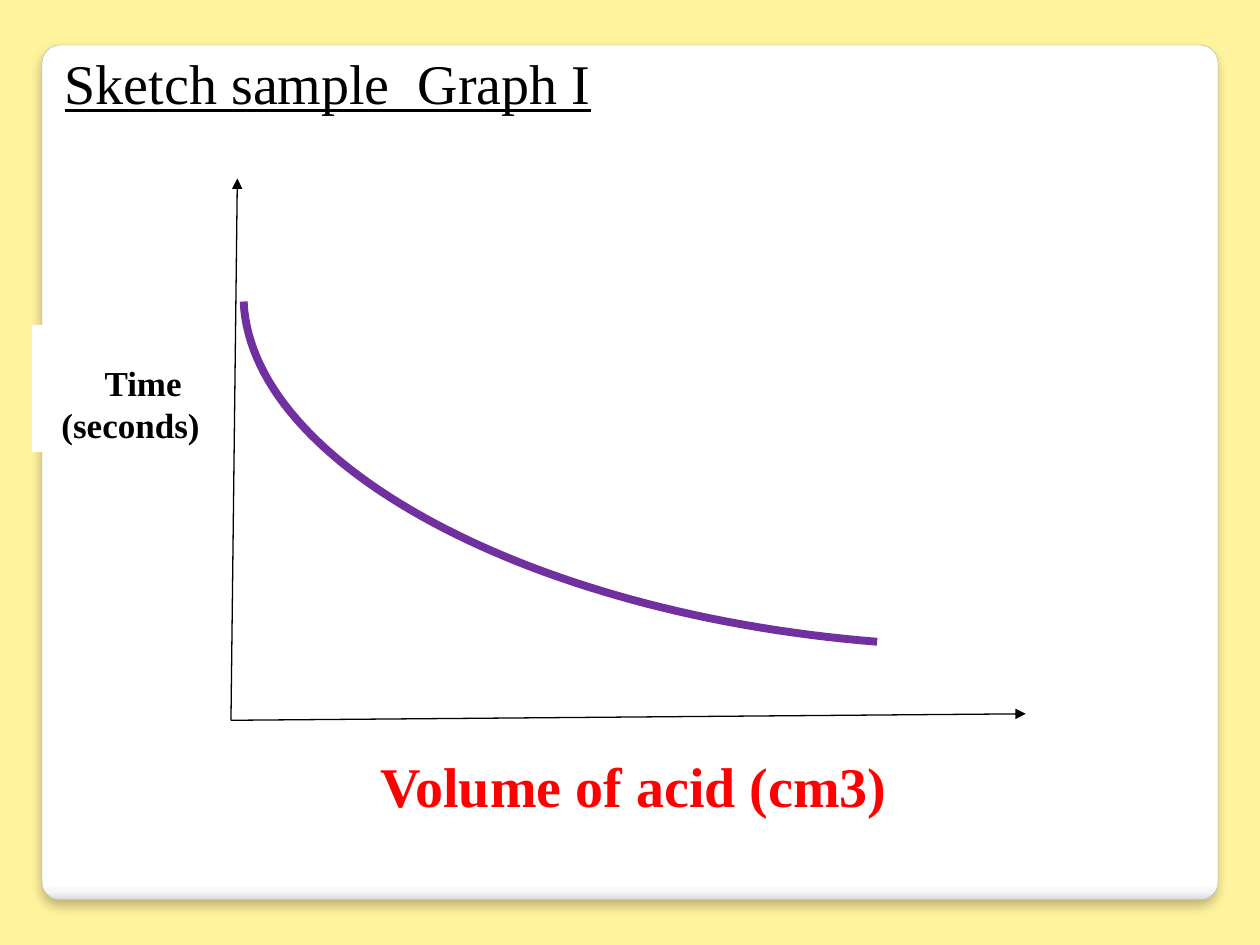
from dataclasses import dataclass
from lxml import etree
from pptx import Presentation
from pptx.dml.color import RGBColor
from pptx.enum.shapes import MSO_CONNECTOR, MSO_SHAPE
from pptx.enum.text import MSO_ANCHOR
from pptx.oxml.ns import qn
from pptx.util import Inches, Pt

LINE = MSO_CONNECTOR.STRAIGHT
RECT = MSO_SHAPE.RECTANGLE
ROUND = MSO_SHAPE.ROUNDED_RECTANGLE
TOP = MSO_ANCHOR.TOP


@dataclass(frozen=True)
class Theme:
    font: str = "Times New Roman"
    back: str = "FFF39D"
    card: str = "FFFFFF"
    edge: str = "A4A4A4"
    ink: str = "000000"
    red: str = "FF0000"
    curve: str = "7030A0"
    fade: tuple = ((0, "FFFFFF"), (98, "FFFFFF"), (99, "F7F7F7"), (100, "DADADA"))
    large: int = 32
    small: int = 20


THEME = Theme()
COLS, ROWS = 120, 90
CELL = Inches(10) / COLS


def cell(n):
    """Length of n grid cells."""
    return round(n * CELL)


def rgb(code):
    return RGBColor.from_string(code)


def node(up, tag, **attrs):
    """Add a drawing element with the given attributes."""
    part = etree.SubElement(up, qn("a:" + tag))
    for key, val in attrs.items():
        part.set(key, str(val))
    return part


def card(slide, box):
    """Rounded sheet with a faded foot and a soft shadow."""
    sheet = slide.shapes.add_shape(ROUND, *map(cell, box))
    sheet.adjustments[0] = 0.021
    sheet.fill.gradient()
    sheet.fill.gradient_angle = 270
    props = sheet._element.spPr
    stops = props.find(".//" + qn("a:gsLst"))
    for old in list(stops):
        stops.remove(old)
    for pos, code in THEME.fade:
        node(node(stops, "gs", pos=pos * 1000), "srgbClr", val=code)
    sheet.line.color.rgb = rgb(THEME.edge)
    sheet.line.width = Pt(0.16)
    shade = node(node(props, "effectLst"), "outerShdw", blurRad=Pt(6),
                 dist=Pt(4), dir=5400000, algn="t", rotWithShape=0)
    node(node(shade, "srgbClr", val=THEME.ink), "alpha", val=25000)


def label(slide, box, lines, size, color, bold=False, under=False,
          fill=True, top=0.6):
    """Text block; lines are (indent in cells, words) pairs."""
    if fill:
        shape = slide.shapes.add_shape(RECT, *map(cell, box))
        shape.shadow.inherit = False
        shape.fill.solid()
        shape.fill.fore_color.rgb = rgb(THEME.card)
        shape.line.fill.background()
    else:
        shape = slide.shapes.add_textbox(*map(cell, box))
    frame = shape.text_frame
    frame.word_wrap = True
    frame.vertical_anchor = TOP
    frame.margin_top = cell(top)
    frame.margin_bottom = 0
    for i, (indent, words) in enumerate(lines):
        para = frame.add_paragraph() if i else frame.paragraphs[0]
        props = para._p.get_or_add_pPr()
        props.set("marL", str(cell(indent)))
        props.set("algn", "l")
        run = para.add_run()
        run.text = words
        font = run.font
        font.name, font.size = THEME.font, Pt(size)
        font.bold, font.underline = bold, under
        font.color.rgb = rgb(color)


def axis(slide, start, end):
    """Thin line with an arrowhead at its end."""
    line = slide.shapes.add_connector(LINE, *map(cell, start + end))
    line.line.color.rgb = rgb(THEME.ink)
    line.line.width = Pt(0.75)
    node(line.line._get_or_add_ln(), "tailEnd", type="triangle")
    node(line._element.spPr, "effectLst")


def curve(slide, knots, steps=60):
    """Open cubic curve through its four control points."""
    def spot(t):
        u = 1 - t
        parts = (u**3, 3 * u * u * t, 3 * u * t * t, t**3)
        return tuple(cell(sum(w * k[d] for w, k in zip(parts, knots)))
                     for d in (0, 1))

    dots = [spot(i / steps) for i in range(steps + 1)]
    pen = slide.shapes.build_freeform(*dots[0])
    pen.add_line_segments(dots[1:], close=False)
    shape = pen.convert_to_shape()
    shape.shadow.inherit = False
    shape.fill.background()
    shape.line.color.rgb = rgb(THEME.curve)
    shape.line.width = Pt(4.5)


def graph(slide, box):
    """Axes, axis names and falling curve inside the box."""
    x, y, w, h = box

    def at(across, down):
        return x + w * across, y + h * down

    # Axes
    base = at(0, 1)
    axis(slide, base, at(0.008, 0))
    axis(slide, base, at(1, 0.988))
    # Axis names
    label(slide, (*at(-0.25, 0.27), 18, 12.1),
          [(5.7, "Time"), (1.6, "(seconds)")],
          THEME.small, THEME.ink, bold=True, top=3.5)
    label(slide, (*at(0.172, 1.047), 53, 6.8), [(0, "Volume of acid (cm3)")],
          THEME.large, THEME.red, bold=True)
    # Curve
    curve(slide, [at(0.813, 0.855), at(0.375, 0.804),
                  at(0.025, 0.527), at(0.016, 0.227)])


def main():
    deck = Presentation()
    deck.slide_width, deck.slide_height = cell(COLS), cell(ROWS)
    slide = deck.slides.add_slide(deck.slide_layouts[6])
    slide.background.fill.solid()
    slide.background.fill.fore_color.rgb = rgb(THEME.back)
    card(slide, (4, 4.3, 112, 81.4))
    graph(slide, (22, 17, 75.7, 51.6))
    # Title
    label(slide, (5, 4, 115, 7.7), [(0, "Sketch sample  Graph I")],
          THEME.large, THEME.ink, under=True, fill=False)
    deck.save("out.pptx")


if __name__ == "__main__":
    main()
